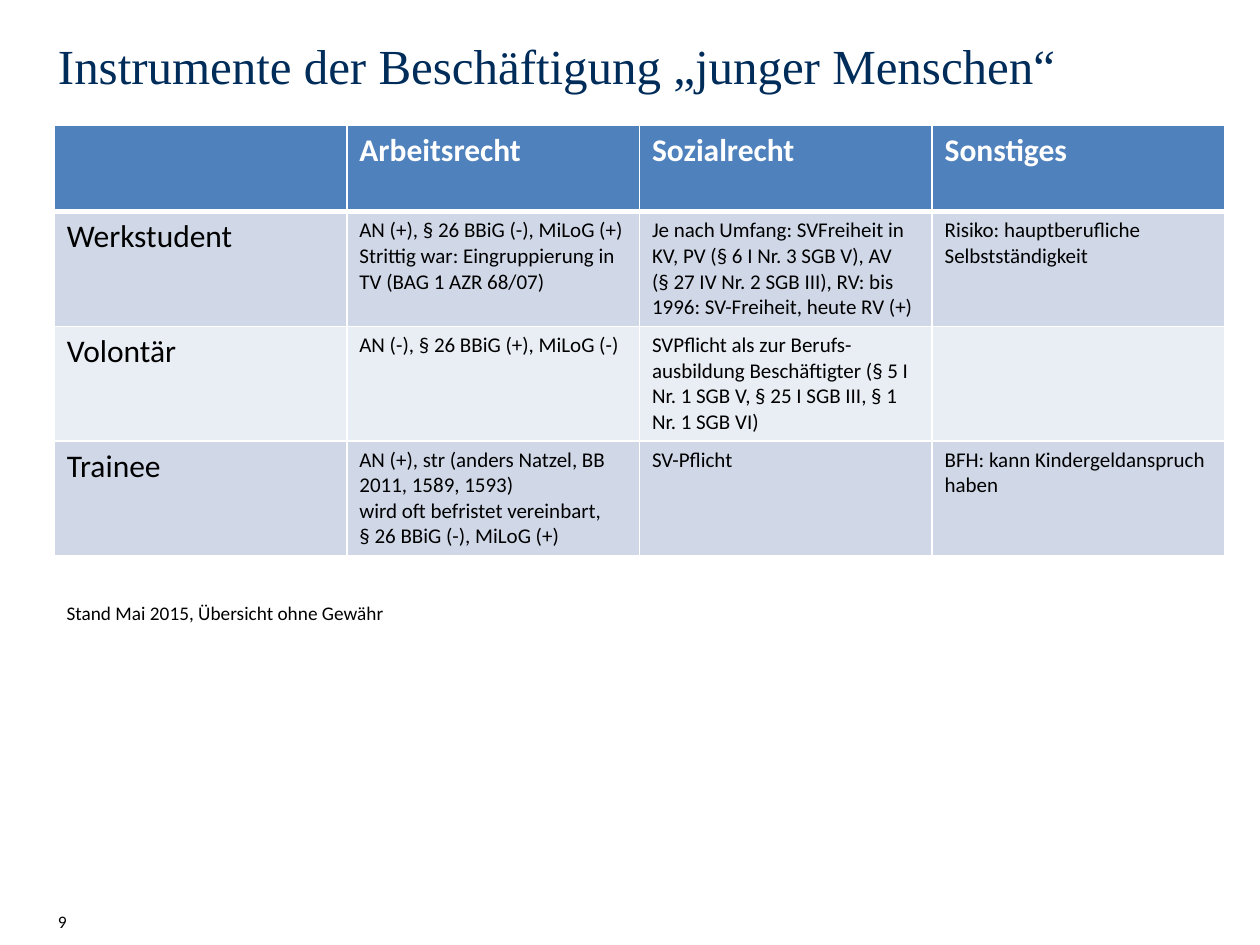
from lxml import etree
from pptx import Presentation
from pptx.dml.color import RGBColor
from pptx.enum.text import MSO_ANCHOR
from pptx.oxml.ns import qn
from pptx.util import Inches, Pt

TOP, BOTTOM = MSO_ANCHOR.TOP, MSO_ANCHOR.BOTTOM
WIDE, HIGH = 10, 7.5
HEX = {"navy": "002C5A", "blue": "4F81BD", "band": "D0D8E8",
       "pale": "E9EDF4", "white": "FFFFFF", "black": "000000"}
SANS, SERIF = "Calibri", "Times New Roman"
LEFT, SPAN = 0.43, 9.29
HEAD, ROW = 0.69, 0.91

# Table content: each cell is a list of paragraphs
HEADS = ["", "Arbeitsrecht", "Sozialrecht", "Sonstiges"]
ROWS = [
    ("Werkstudent",
     ["AN (+), § 26 BBiG (-), MiLoG (+)",
      "Strittig war: Eingruppierung in TV (BAG 1 AZR 68/07)"],
     ["Je nach Umfang: SVFreiheit in KV, PV (§ 6 I Nr. 3 SGB V), AV",
      "(§ 27 IV Nr. 2 SGB III), RV: bis 1996: SV-Freiheit, heute RV (+)"],
     ["Risiko: hauptberufliche Selbstständigkeit"]),
    ("Volontär",
     ["AN (-), § 26 BBiG (+), MiLoG (-)"],
     ["SVPflicht als zur Berufs- ausbildung Beschäftigter (§ 5 I Nr. 1 SGB V, "
      "§ 25 I SGB III, § 1 Nr. 1 SGB VI)"],
     []),
    ("Trainee",
     ["AN (+), str (anders Natzel, BB 2011, 1589, 1593)",
      "wird oft befristet vereinbart,",
      "§ 26 BBiG (-), MiLoG (+)"],
     ["SV-Pflicht"],
     ["BFH: kann Kindergeldanspruch haben"]),
]


class Page:
    def __init__(self, deck):
        self.slide = deck.slides.add_slide(deck.slide_layouts[6])

    def lines(self, frame, lines, size, color="black", font=SANS,
              bold=False, lead=None):
        for i, line in enumerate(lines):
            para = frame.paragraphs[0] if i == 0 else frame.add_paragraph()
            if lead:
                para.line_spacing = Pt(lead)
            run = para.add_run()
            run.text = line
            run.font.size, run.font.name, run.font.bold = Pt(size), font, bold
            run.font.color.rgb = RGBColor.from_string(HEX[color])

    def text(self, box, line, size, pad=(0.1, 0.05, 0.1, 0.05), anchor=TOP,
             **style):
        frame = self.slide.shapes.add_textbox(*map(Inches, box)).text_frame
        frame.word_wrap = True
        frame.vertical_anchor = anchor
        (frame.margin_left, frame.margin_top,
         frame.margin_right, frame.margin_bottom) = map(Inches, pad)
        self.lines(frame, [line], size, **style)

    def edge(self, cell, low):
        props = cell._tc.get_or_add_tcPr()
        for side, width in (("L", 1), ("R", 1), ("T", 1), ("B", low)):
            line = etree.SubElement(props, qn("a:ln" + side), w=str(Pt(width)))
            fill = etree.SubElement(line, qn("a:solidFill"))
            etree.SubElement(fill, qn("a:srgbClr"), val=HEX["white"])

    def cell(self, cell, lines, size, fill, low=1, **style):
        self.edge(cell, low)
        cell.fill.solid()
        cell.fill.fore_color.rgb = RGBColor.from_string(HEX[fill])
        self.lines(cell.text_frame, lines, size, **style)

    def table(self, left, top, width, heads, rows):
        count = len(heads)
        box = (left, top, width, HEAD + ROW * len(rows))
        grid = self.slide.shapes.add_table(
            len(rows) + 1, count, *map(Inches, box)).table
        for col in grid.columns:
            col.width = Inches(width / count)
        for i, row in enumerate(grid.rows):
            row.height = Inches(ROW if i else HEAD)
        for c, head in enumerate(heads):
            self.cell(grid.cell(0, c), [head] if head else [], 18, "blue",
                      low=3, color="white", bold=True)
        for r, (name, *cells) in enumerate(rows, 1):
            fill = "band" if r % 2 else "pale"
            self.cell(grid.cell(r, 0), [name], 18, fill)
            for c, lines in enumerate(cells, 1):
                self.cell(grid.cell(r, c), lines, 12, fill)


def main():
    deck = Presentation()
    deck.slide_width, deck.slide_height = Inches(WIDE), Inches(HIGH)
    page = Page(deck)

    # Page number
    page.text((0.42, 7.19, 0.32, 0.25), "9", 10,
              pad=(0.04, 0.04, 0, 0.04), anchor=BOTTOM)
    # Title
    page.text((0.42, 0.32, SPAN, 0.98),
              "Instrumente der Beschäftigung „junger Menschen“", 28,
              pad=(0.04,) * 4, color="navy", font=SERIF, lead=28)
    # Overview table
    page.table(LEFT, 0.99, SPAN, HEADS, ROWS)
    # Note
    page.text((LEFT, 4.72, 2.83, 0.29),
              "Stand Mai 2015, Übersicht ohne Gewähr", 11)

    deck.save("out.pptx")


if __name__ == "__main__":
    main()
